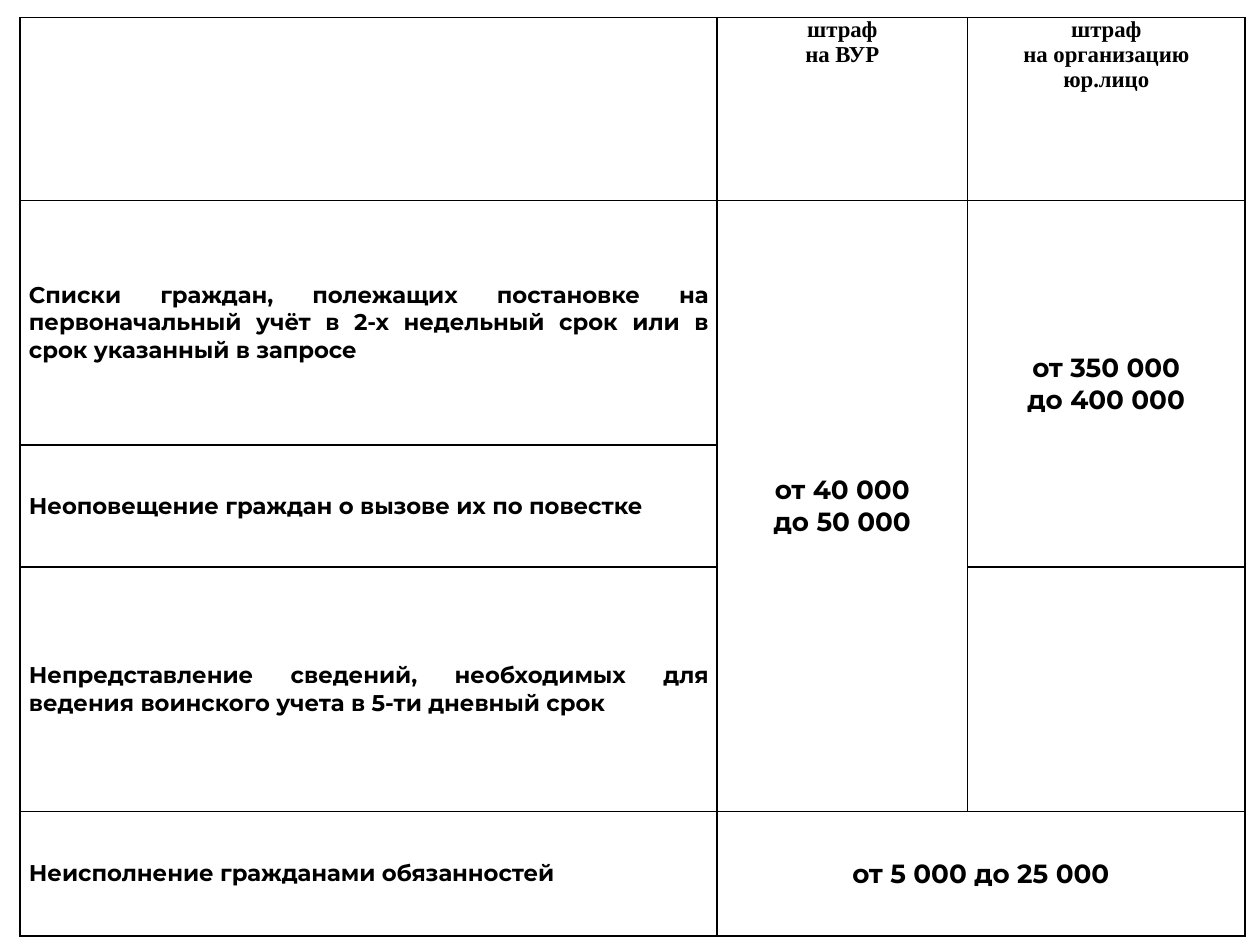
"""Build a slide with a table of fines for military registration offences."""
from lxml.etree import SubElement
from pptx import Presentation
from pptx.dml.color import RGBColor
from pptx.enum.text import MSO_ANCHOR, PP_ALIGN
from pptx.oxml.ns import qn
from pptx.util import Inches, Pt

BLACK = RGBColor(0, 0, 0)
LEFT, TOP = 0.16, 0.14
COLUMN_WIDTHS = [5.53, 1.99, 2.2]
ROW_HEIGHTS = [1.45, 1.94, 0.97, 1.94, 0.99]
HEADERS = {
    (0, 1): ["штраф", "на ВУР"],
    (0, 2): ["штраф", "на организацию", "юр.лицо"],
}
OFFENCES = {
    (1, 0): ["Списки граждан, полежащих постановке на первоначальный учёт "
             "в 2-х недельный срок или в срок указанный в запросе"],
    (2, 0): ["Неоповещение граждан о вызове их по повестке"],
    (3, 0): ["Непредставление сведений, необходимых для ведения "
             "воинского учета в 5-ти дневный срок"],
    (4, 0): ["Неисполнение гражданами обязанностей"],
}
FINES = {
    (1, 1): ["от 40 000", "до 50 000"],
    (1, 2): ["от 350 000", "до 400 000"],
    (4, 1): ["от 5 000 до 25 000"],
}
MERGES = [((1, 1), (3, 1)), ((1, 2), (2, 2)), ((4, 1), (4, 2))]
STYLES = [
    (HEADERS, "Times New Roman", 13, PP_ALIGN.CENTER, MSO_ANCHOR.TOP),
    (OFFENCES, "Montserrat", 13, PP_ALIGN.JUSTIFY, MSO_ANCHOR.MIDDLE),
    (FINES, "Montserrat", 15, PP_ALIGN.CENTER, MSO_ANCHOR.MIDDLE),
]


def format_cell(cell):
    cell.margin_left = cell.margin_right = Inches(0.07)
    cell.margin_top = cell.margin_bottom = 0
    properties = cell._tc.get_or_add_tcPr()
    for side in ("L", "R", "T", "B"):
        border = SubElement(properties, qn(f"a:ln{side}"), w=str(Pt(1)))
        fill = SubElement(border, qn("a:solidFill"))
        SubElement(fill, qn("a:srgbClr"), val=str(BLACK))
    cell.fill.background()


def write_cell(cell, lines, font_name, size, alignment, anchor):
    cell.vertical_anchor = anchor
    frame = cell.text_frame
    for index, line in enumerate(lines):
        paragraph = frame.add_paragraph() if index else frame.paragraphs[0]
        paragraph.alignment = alignment
        run = paragraph.add_run()
        run.text = line
        run.font.name = font_name
        run.font.size = Pt(size)
        run.font.bold = True
        run.font.color.rgb = BLACK


def main():
    presentation = Presentation()
    presentation.slide_width, presentation.slide_height = Inches(10), Inches(7.5)
    slide = presentation.slides.add_slide(presentation.slide_layouts[6])
    table = slide.shapes.add_table(
        len(ROW_HEIGHTS), len(COLUMN_WIDTHS), Inches(LEFT), Inches(TOP),
        Inches(sum(COLUMN_WIDTHS)), Inches(sum(ROW_HEIGHTS))).table
    table.first_row = table.horz_banding = False
    for column, width in zip(table.columns, COLUMN_WIDTHS):
        column.width = Inches(width)
    for row, height in zip(table.rows, ROW_HEIGHTS):
        row.height = Inches(height)
    for cell in table.iter_cells():
        format_cell(cell)
    for first, last in MERGES:
        table.cell(*first).merge(table.cell(*last))
    for texts, *style in STYLES:
        for position, lines in texts.items():
            write_cell(table.cell(*position), lines, *style)
    presentation.save("out.pptx")


if __name__ == "__main__":
    main()
